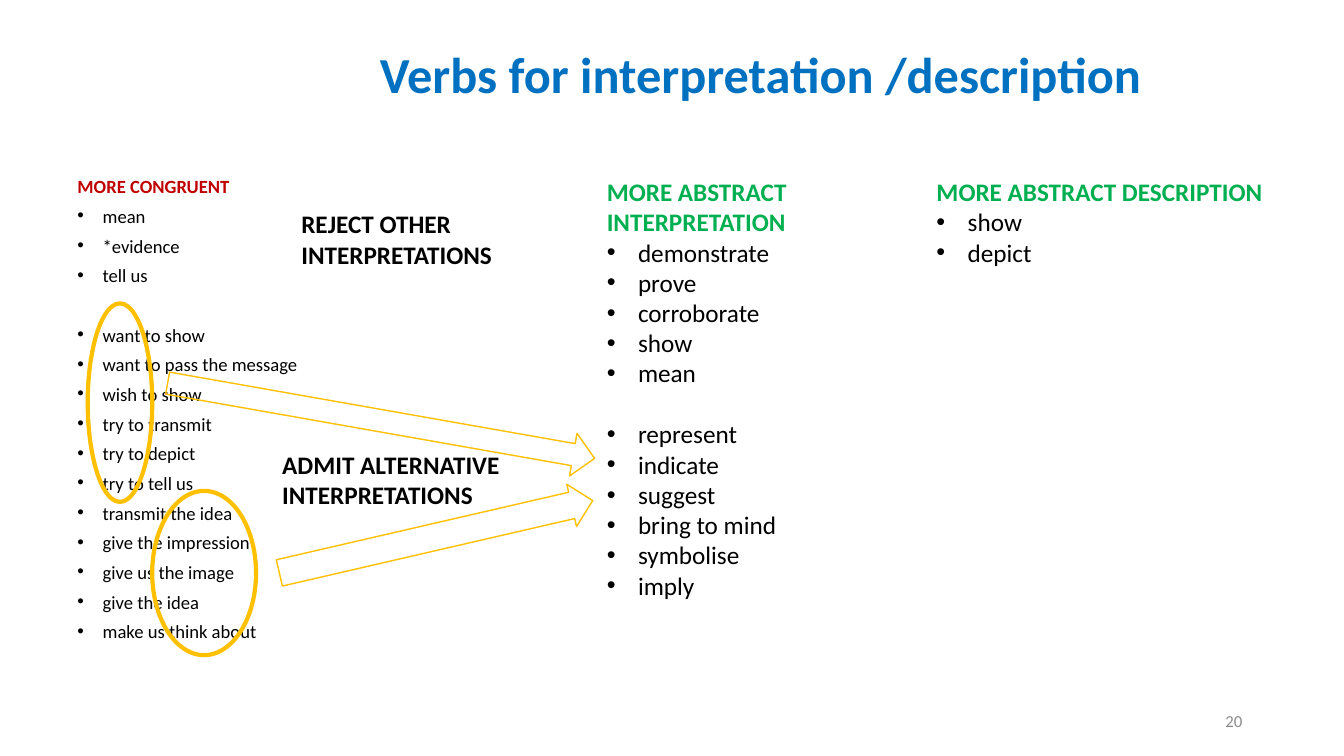
import dataclasses
import typing

import pptx
import pptx.dml.color
import pptx.enum.shapes
import pptx.enum.text
import pptx.util
from lxml import etree

Inches = pptx.util.Inches
Pt = pptx.util.Pt
Shapes = pptx.enum.shapes.MSO_SHAPE
Anchor = pptx.enum.text.MSO_ANCHOR
Align = pptx.enum.text.PP_ALIGN
AutoSize = pptx.enum.text.MSO_AUTO_SIZE

BLUE, RED, GREEN = "0070C0", "C00000", "00B050"
BLACK, GRAY, GOLD = "000000", "8C8C8C", "FFC000"


class Area(typing.NamedTuple):
    left: float
    top: float
    width: float
    height: float

    def lengths(self) -> list[int]:
        return [Inches(value) for value in self]


@dataclasses.dataclass
class Label:
    area: Area
    text: str
    size: float = 18
    color: str = BLACK
    bold: bool = True
    indent: float = 0
    frame_format: dict = dataclasses.field(default_factory=dict)
    para_format: dict = dataclasses.field(default_factory=dict)


@dataclasses.dataclass
class VerbList:
    heading: Label
    groups: list[list[str]]
    indent: float
    group_space: float


@dataclasses.dataclass
class Outline:
    kind: Shapes
    area: Area
    weight: float
    rotation: float = 0
    adjustments: tuple[float, ...] = ()


GROW = {"auto_size": AutoSize.SHAPE_TO_FIT_TEXT}
MIDDLE = {"vertical_anchor": Anchor.MIDDLE}
TIGHT = {"line_spacing": 0.7, "space_before": Pt(10)}

LABELS = [
    Label(Area(0.67, 0.3, 12, 0.93), "Verbs for interpretation /description", 36, BLUE,
          indent=3, frame_format=MIDDLE, para_format={"line_spacing": 0.9}),
    Label(Area(9.42, 6.95, 3, 0.4), "20", 12, GRAY, False,
          frame_format=MIDDLE, para_format={"alignment": Align.RIGHT}),
    Label(Area(2.89, 2.02, 3.15, 0.71), "REJECT OTHER INTERPRETATIONS", frame_format=GROW),
    Label(Area(2.7, 4.41, 2.49, 0.71), "ADMIT ALTERNATIVE INTERPRETATIONS", frame_format=GROW),
]

VERB_LISTS = [
    VerbList(
        Label(Area(0.67, 1.75, 5.06, 4.95), "MORE CONGRUENT", 13.3, RED, para_format=TIGHT),
        [["mean", "*evidence", "tell us"],
         ["want to show", "want to pass the message", "wish to show", "try to transmit",
          "try to depict", "try to tell us", "transmit the idea", "give the impression",
          "give us the image", "give the idea", "make us think about"]],
        0.25, 31.3),
    VerbList(
        Label(Area(5.92, 1.7, 3.04, 4.95), "MORE ABSTRACT INTERPRETATION", 18, GREEN,
              frame_format=GROW),
        [["demonstrate", "prove", "corroborate", "show", "mean"],
         ["represent", "indicate", "suggest", "bring to mind", "symbolise", "imply"]],
        0.31, 22),
    VerbList(
        Label(Area(9.19, 1.7, 3.46, 1.01), "MORE ABSTRACT DESCRIPTION", 18, GREEN,
              frame_format=GROW),
        [["show", "depict"]],
        0.31, 22),
]

OUTLINES = [
    Outline(Shapes.OVAL, Area(0.87, 3.01, 0.64, 1.97), 3),
    Outline(Shapes.RIGHT_ARROW, Area(1.63, 3.96, 4.3, 0.43), 1, 10, (0.516, 0.5)),
    Outline(Shapes.OVAL, Area(1.51, 4.87, 1.03, 1.63), 3),
    Outline(Shapes.RIGHT_ARROW, Area(2.73, 5.11, 3.19, 0.43), 1, 347, (0.621, 0.5)),
]


def rgb(value: str) -> pptx.dml.color.RGBColor:
    return pptx.dml.color.RGBColor.from_string(value)


def apply_format(target: typing.Any, values: dict) -> None:
    for name, value in values.items():
        setattr(target, name, value)


def write(para: typing.Any, text: str, size: float, color: str, bold: bool) -> None:
    span = para.add_run()
    span.text = text
    apply_format(span.font, {"name": "Calibri", "size": Pt(size), "bold": bold})
    span.font.color.rgb = rgb(color)


def set_indent(para: typing.Any, left: float, first: float) -> typing.Any:
    properties = para._p.get_or_add_pPr()
    properties.set("marL", str(Inches(left)))
    properties.set("indent", str(Inches(first)))
    return properties


def add_bullet(para: typing.Any, indent: float) -> None:
    properties = set_indent(para, indent, -indent)
    namespace = pptx.oxml.ns.nsdecls("a").split('"')[1]
    font = etree.SubElement(properties, f"{{{namespace}}}buFont")
    font.set("typeface", "Arial")
    bullet = etree.SubElement(properties, f"{{{namespace}}}buChar")
    bullet.set("char", "•")


def draw_label(page: typing.Any, label: Label) -> typing.Any:
    box = page.shapes.add_textbox(*label.area.lengths())
    apply_format(box.text_frame, {"word_wrap": True, **label.frame_format})
    para = box.text_frame.paragraphs[0]
    apply_format(para, label.para_format)
    if label.indent:
        set_indent(para, label.indent, 0)
    write(para, label.text, label.size, label.color, label.bold)
    return box


def draw_verb_list(page: typing.Any, verbs: VerbList) -> None:
    box = draw_label(page, verbs.heading)
    for group_index, group in enumerate(verbs.groups):
        for verb_index, verb in enumerate(group):
            para = box.text_frame.add_paragraph()
            apply_format(para, verbs.heading.para_format)
            if group_index and not verb_index:
                para.space_before = Pt(verbs.group_space)
            add_bullet(para, verbs.indent)
            write(para, verb, verbs.heading.size, BLACK, False)


def draw_outline(page: typing.Any, outline: Outline) -> None:
    shape = page.shapes.add_shape(outline.kind, *outline.area.lengths())
    shape.shadow.inherit = False
    shape.rotation = outline.rotation
    shape.fill.background()
    shape.line.color.rgb = rgb(GOLD)
    shape.line.width = Pt(outline.weight)
    for index, value in enumerate(outline.adjustments):
        shape.adjustments[index] = value


def main() -> None:
    deck = pptx.Presentation()
    apply_format(deck, {"slide_width": Inches(13.33), "slide_height": Inches(7.5)})
    page = deck.slides.add_slide(deck.slide_layouts[6])
    for verbs in VERB_LISTS:
        draw_verb_list(page, verbs)
    for outline in OUTLINES:
        draw_outline(page, outline)
    for label in LABELS:
        draw_label(page, label)
    deck.save("out.pptx")


if __name__ == "__main__":
    main()
